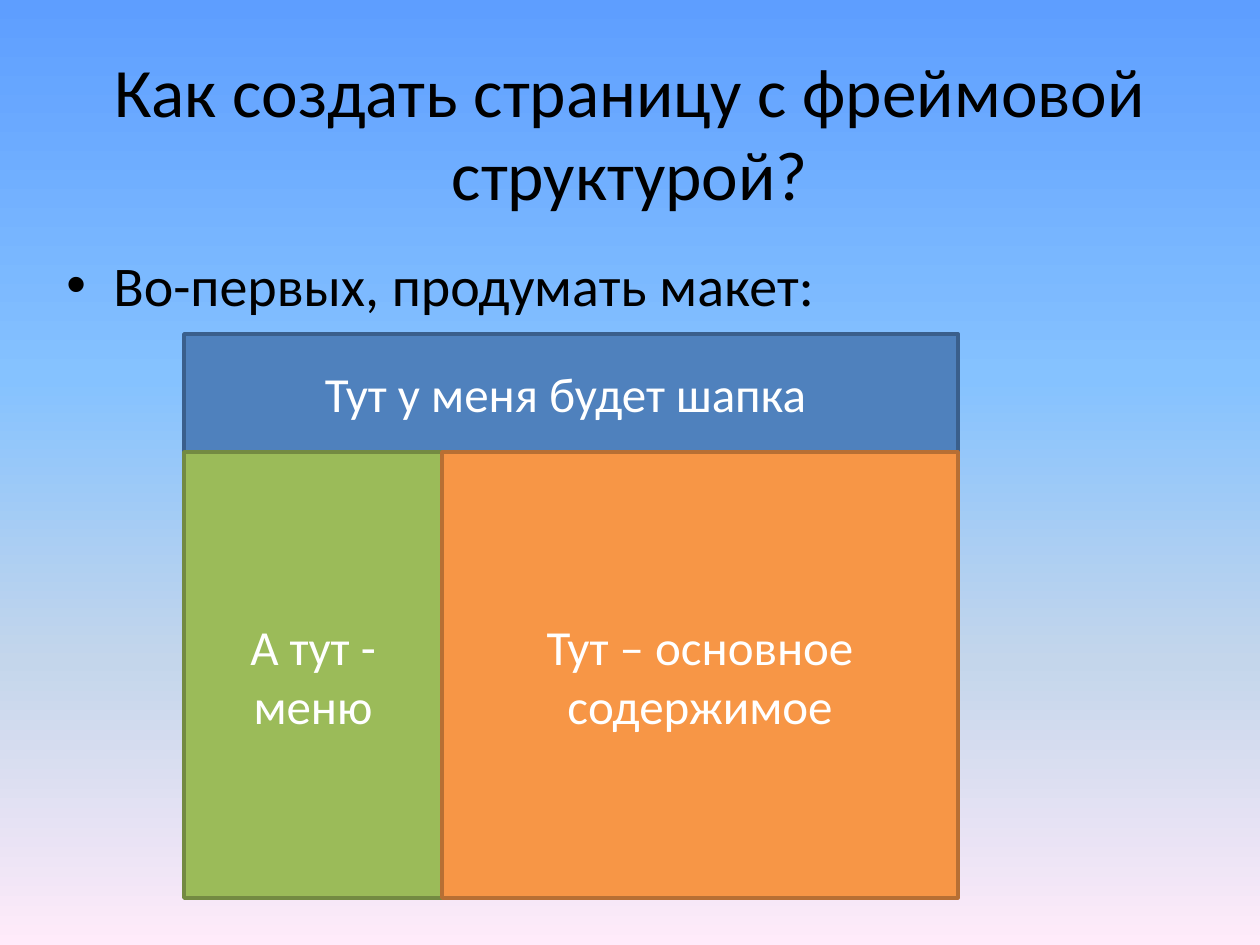
from dataclasses import dataclass

from lxml import etree
from pptx import Presentation
from pptx.dml.color import RGBColor
from pptx.enum import shapes, text
from pptx.oxml.ns import qn
from pptx.util import Pt

SCALE = 914400 / 126


@dataclass(frozen=True)
class Theme:
    font: str = "Calibri"
    ink: str = "000000"
    light: str = "FFFFFF"
    title: float = 39.6
    body: int = 32
    label: int = 28
    edge: int = 2
    head: tuple = ("4F81BD", "3A5F8C")
    menu: tuple = ("9BBB59", "738A42")
    main: tuple = ("F79646", "B76F34")
    sky: tuple = ((0, "5E9EFF"), (40, "85C2FF"), (70, "C4D6EB"), (100, "FFEBFA"))


THEME = Theme()


def px(*values):
    return [round(v * SCALE) for v in values]


def paint_sky(slide):
    """Fill the background with a gradient running from top to bottom."""
    fill = slide.background.fill
    fill.gradient()
    fill.gradient_angle = 270
    stops = next(slide.background._cSld.iter(qn("a:gsLst")))
    for old in list(stops):
        stops.remove(old)
    for pos, color in THEME.sky:
        stop = etree.SubElement(stops, qn("a:gs"), pos=str(pos * 1000))
        etree.SubElement(stop, qn("a:srgbClr"), val=color)


def write(shape, words, size, color, align, anchor):
    frame = shape.text_frame
    frame.text = words
    frame.word_wrap = True
    frame.auto_size = text.MSO_AUTO_SIZE.NONE
    frame.vertical_anchor = anchor
    par = frame.paragraphs[0]
    par.alignment = align
    font = par.runs[0].font
    font.name = THEME.font
    font.size = Pt(size)
    font.color.rgb = RGBColor.from_string(color)
    return par


def add_title(slide, box, words):
    title = slide.shapes.title
    title.left, title.top, title.width, title.height = px(*box)
    write(title, words, THEME.title, THEME.ink,
          text.PP_ALIGN.CENTER, text.MSO_ANCHOR.MIDDLE)


def add_bullet(slide, box, words):
    area = slide.shapes.add_textbox(*px(*box))
    par = write(area, words, THEME.body, THEME.ink,
                text.PP_ALIGN.LEFT, text.MSO_ANCHOR.TOP)
    par.space_before = Pt(THEME.body * 0.2)
    props = par._p.get_or_add_pPr()
    indent = px(47)[0]
    props.set("marL", str(indent))
    props.set("indent", str(-indent))
    etree.SubElement(props, qn("a:buFont"), typeface="Arial")
    etree.SubElement(props, qn("a:buChar"), char="•")


def add_block(slide, box, words, colors):
    block = slide.shapes.add_shape(shapes.MSO_SHAPE.RECTANGLE, *px(*box))
    block.shadow.inherit = False
    fill, edge = colors
    block.fill.solid()
    block.fill.fore_color.rgb = RGBColor.from_string(fill)
    block.line.color.rgb = RGBColor.from_string(edge)
    block.line.width = Pt(THEME.edge)
    write(block, words, THEME.label, THEME.light,
          text.PP_ALIGN.CENTER, text.MSO_ANCHOR.MIDDLE)


def add_layout(slide, left, top, width, head, body):
    """Draw the page plan: a header over a menu that takes a third of the width."""
    side = width // 3
    low = top + head
    add_block(slide, (left, top, width, head), "Тут у меня будет шапка ", THEME.head)
    add_block(slide, (left, low, side, body), "А тут - меню", THEME.menu)
    add_block(slide, (left + side, low, width - side, body),
              "Тут – основное содержимое", THEME.main)


def main():
    deck = Presentation()
    deck.slide_width, deck.slide_height = px(1260, 945)
    slide = deck.slides.add_slide(deck.slide_layouts[5])
    paint_sky(slide)
    add_title(slide, (63, 38, 1134, 186),
              "Как создать страницу с фреймовой структурой?")
    add_bullet(slide, (54, 244, 804, 139), "Во-первых, продумать макет:")
    add_layout(slide, left=184, top=334, width=774, head=118, body=446)
    deck.save("out.pptx")


if __name__ == "__main__":
    main()
